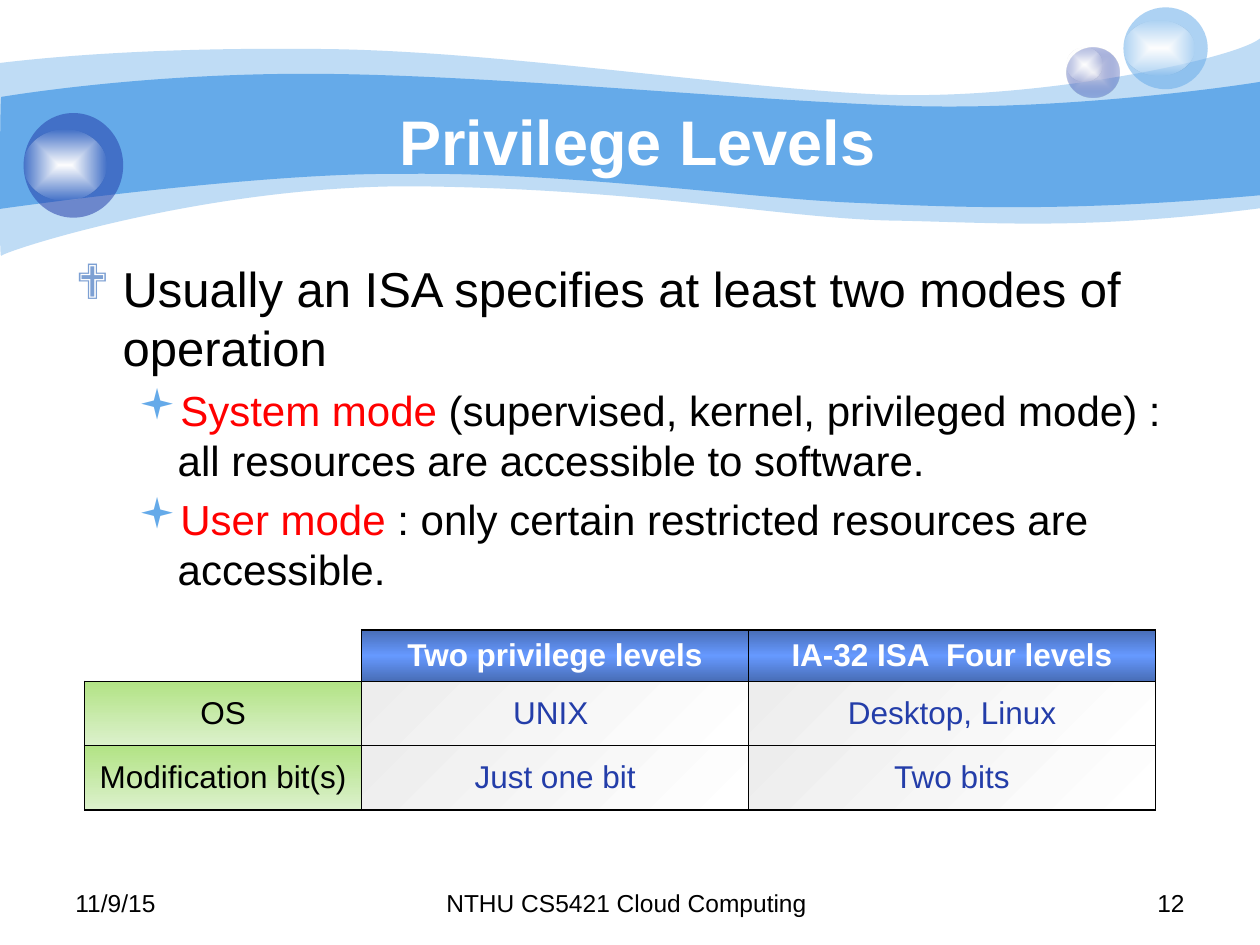
"""Build the Privilege Levels slide with its wave banner, bullets and table."""
from lxml import etree
from pptx import Presentation
from pptx.dml.color import RGBColor
from pptx.enum.shapes import MSO_SHAPE
from pptx.enum.text import MSO_ANCHOR, PP_ALIGN
from pptx.oxml.ns import qn
from pptx.util import Pt

OVAL = MSO_SHAPE.OVAL
LEFT, CENTER, RIGHT = PP_ALIGN.LEFT, PP_ALIGN.CENTER, PP_ALIGN.RIGHT
TOP, MIDDLE = MSO_ANCHOR.TOP, MSO_ANCHOR.MIDDLE

THEME = {
    "font": "Arial", "mark_font": "Wingdings",
    "title": 36, "body": 28, "mode": 24, "table": 18, "footer": 14,
    "white": "FFFFFF", "black": "000000", "red": "FF0000",
    "sky": "65AAE9", "navy": "233DA9", "pearl": "E1E2ED", "diamond": "7DA0D3",
    "royal": "6699FF", "leaf": "B2E385", "mint": "DCF1CC",
}

TITLE = "Privilege Levels"
BULLETS = [
    {"size": "body", "mark": "❖", "mark_color": "diamond", "margin": 27, "hang": 27, "before": 0,
     "runs": [("Usually an ISA specifies at least two modes of operation", "black")]},
    {"size": "mode", "mark": "▪", "mark_color": "sky", "margin": 58.5, "hang": 22.5, "before": 4.8,
     "runs": [("System mode ", "red"),
              ("(supervised, kernel, privileged mode) : all resources are accessible to software.",
               "black")]},
    {"size": "mode", "mark": "▪", "mark_color": "sky", "margin": 58.5, "hang": 22.5, "before": 4.8,
     "runs": [("User mode ", "red"),
              (": only certain restricted resources are accessible.", "black")]},
]
LEVELS = [
    ["", "Two privilege levels", "IA-32 ISA  Four levels"],
    ["OS", "UNIX ", "Desktop, Linux"],
    ["Modification bit(s)", "Just one bit", "Two bits"],
]
COLUMN_WIDTHS = [158.4, 221, 232.6]
ROW_HEIGHTS = [29.5, 36.7, 36.7]
DARK, DIM = {"shade": 46.27}, {"shade": 84.71}
CELL_STYLES = {
    "header": {"stops": [(0, "royal", DARK), (50, "royal", {}), (100, "royal", DARK)],
               "angle": 90, "color": "white", "bold": True},
    "label": {"stops": [(0, "leaf", {}), (100, "mint", {})],
              "angle": 90, "color": "black", "bold": False},
    "value": {"stops": [(0, "white", DIM), (100, "white", {})],
              "angle": 45, "color": "navy", "bold": False},
}
FOOTERS = [
    ("11/9/15", (36, 504, 168, 25.2), LEFT),
    ("NTHU CS5421 Cloud Computing ", (246, 504, 228, 25.2), CENTER),
    ("12", (516, 504, 168, 25.2), RIGHT),
]
WAVES = [
    ({"alpha": 41}, (0, 36), [
        [(17, 34), (77, 27), (178, 28)], [(278, 28), (414, 50), (503, 54)],
        [(592, 57.6), (705.6, 33.8), (720, 22)], [(720, 119)],
        [(618, 132), (567, 127), (508, 126)], [(448, 124.6), (371, 108.7), (247, 106.6)],
        [(124, 103.7), (3, 143.3), (0.7, 146.2)], [(-0.7, 149.8), (0, 54), (0, 36)]]),
    ({}, (0.7, 55.4), [
        [(1.4, 55.4), (79, 41.8), (178.6, 42.2)], [(278, 42.5), (428.4, 57.6), (517, 60.5)],
        [(605.5, 63.4), (702.7, 49.7), (720, 46.8)], [(720, 111.6)],
        [(614, 121), (551, 118.8), (491, 116)], [(431.3, 113.8), (321.8, 97.9), (228.2, 99.4)],
        [(146.2, 98.6), (-1.4, 119.5), (-0.7, 119.5)], [(0, 119.5), (0, 55.4), (0.7, 55.4)]]),
]
GLOW = [(0, "white", {}), (100, "white", {"alpha": 0})]
BUBBLES = [
    ((609.6, 27.2, 30.2, 28.8), [(0, "pearl", {}), (100, "navy", {"alpha": 31})]),
    ((609.6, 27.2, 20.2, 19.4), GLOW),
    ((642, 4.2, 48.2, 46.8), [(0, "sky", {"alpha": 53})]),
    ((642, 12.1, 40.3, 31), GLOW),
    ((13.5, 64.6, 56.9, 59.8), [(0, "navy", {"alpha": 53})]),
    ((13.5, 74.1, 47.5, 40.3), GLOW),
]


def assign(target, values):
    for name, value in values.items():
        setattr(target, name, value)


def add_node(parent, tag, **attributes):
    return etree.SubElement(parent, qn(tag), {key: str(value) for key, value in attributes.items()})


def add_color(parent, color, effects):
    node = add_node(parent, "a:srgbClr", val=THEME[color])
    for effect, percent in effects.items():
        add_node(node, f"a:{effect}", val=round(percent * 1000))


def paint(properties, stops, angle=None):
    if len(stops) == 1:
        fill = etree.Element(qn("a:solidFill"))
        add_color(fill, *stops[0][1:])
    else:
        fill = etree.Element(qn("a:gradFill"), rotWithShape="1")
        stop_list = add_node(fill, "a:gsLst")
        for position, color, effects in stops:
            add_color(add_node(stop_list, "a:gs", pos=position * 1000), color, effects)
        if angle is None:
            shade = add_node(fill, "a:path", path="shape")
            add_node(shade, "a:fillToRect", l=50000, t=50000, r=50000, b=50000)
        else:
            add_node(fill, "a:lin", ang=angle * 60000, scaled=0)
    outline = properties.find(qn("a:ln"))
    if outline is None:
        properties.append(fill)
    else:
        outline.addprevious(fill)


def decorate(shape, stops):
    shape.shadow.inherit = False
    shape.line.fill.background()
    paint(shape._element.spPr, stops)


def add_wave(slide, effects, start, segments):
    builder = slide.shapes.build_freeform(Pt(start[0]), Pt(start[1]))
    builder.add_line_segments([(Pt(x), Pt(y)) for segment in segments for x, y in segment])
    wave = builder.convert_to_shape()
    steps = iter(list(wave._element.iter(qn("a:lnTo"))))
    for segment in segments:
        curve = next(steps)
        if len(segment) == 3:
            curve.tag = qn("a:cubicBezTo")
            for _ in segment[1:]:
                control = next(steps)
                curve.append(control[0])
                control.getparent().remove(control)
    add_node(curve.getparent(), "a:close")
    decorate(wave, [(0, "sky", effects)])


def write(paragraph, text, size, color, bold=False):
    run = paragraph.add_run()
    run.text = text
    assign(run.font, {"name": THEME["font"], "size": Pt(THEME[size]), "bold": bold})
    run.font.color.rgb = RGBColor.from_string(THEME[color])


def add_box(slide, area, anchor=TOP):
    frame = slide.shapes.add_textbox(*map(Pt, area)).text_frame
    assign(frame, {"word_wrap": True, "vertical_anchor": anchor})
    return frame


def add_bullets(slide):
    frame = add_box(slide, (36, 144, 648, 354.2))
    for index, bullet in enumerate(BULLETS):
        paragraph = frame.add_paragraph() if index else frame.paragraphs[0]
        properties = paragraph._p.get_or_add_pPr()
        properties.set("marL", str(Pt(bullet["margin"])))
        properties.set("indent", str(-Pt(bullet["hang"])))
        add_color(add_node(properties, "a:buClr"), bullet["mark_color"], {})
        add_node(properties, "a:buFont", typeface=THEME["mark_font"], charset=2)
        add_node(properties, "a:buChar", char=bullet["mark"])
        paragraph.space_before = Pt(bullet["before"])
        for text, color in bullet["runs"]:
            write(paragraph, text, bullet["size"], color)


def add_borders(cell, hidden):
    properties = cell._tc.get_or_add_tcPr()
    for side in "LRTB":
        line = add_node(properties, f"a:ln{side}", w=Pt(1))
        if side in hidden:
            add_node(line, "a:noFill")
        else:
            add_color(add_node(line, "a:solidFill"), "black", {})


def add_levels(slide):
    area = (48.3, 359.9, sum(COLUMN_WIDTHS), sum(ROW_HEIGHTS))
    table = slide.shapes.add_table(len(LEVELS), len(LEVELS[0]), *map(Pt, area)).table
    assign(table, {"first_row": False, "horz_banding": False})
    for column, width in zip(table.columns, COLUMN_WIDTHS):
        column.width = Pt(width)
    for r, (row, height) in enumerate(zip(LEVELS, ROW_HEIGHTS)):
        table.rows[r].height = Pt(height)
        for c, text in enumerate(row):
            cell = table.cell(r, c)
            cell.vertical_anchor = MIDDLE
            add_borders(cell, "" if text else "LT")
            if not text:
                cell.fill.background()
                continue
            style = CELL_STYLES["header" if r == 0 else "value" if c else "label"]
            paint(cell._tc.tcPr, style["stops"], style["angle"])
            paragraph = cell.text_frame.paragraphs[0]
            paragraph.alignment = CENTER
            write(paragraph, text, "table", style["color"], style["bold"])


def main():
    deck = Presentation()
    assign(deck, {"slide_width": Pt(720), "slide_height": Pt(540)})
    slide = deck.slides.add_slide(deck.slide_layouts[6])
    for wave in WAVES:
        add_wave(slide, *wave)
    for area, stops in BUBBLES:
        decorate(slide.shapes.add_shape(OVAL, *map(Pt, area)), stops)
    heading = add_box(slide, (76.3, 49, 576, 62.6), MIDDLE).paragraphs[0]
    heading.alignment = CENTER
    write(heading, TITLE, "title", "white", True)
    add_bullets(slide)
    add_levels(slide)
    for text, area, alignment in FOOTERS:
        footer = add_box(slide, area).paragraphs[0]
        footer.alignment = alignment
        write(footer, text, "footer", "black")
    deck.save("out.pptx")


if __name__ == "__main__":
    main()
